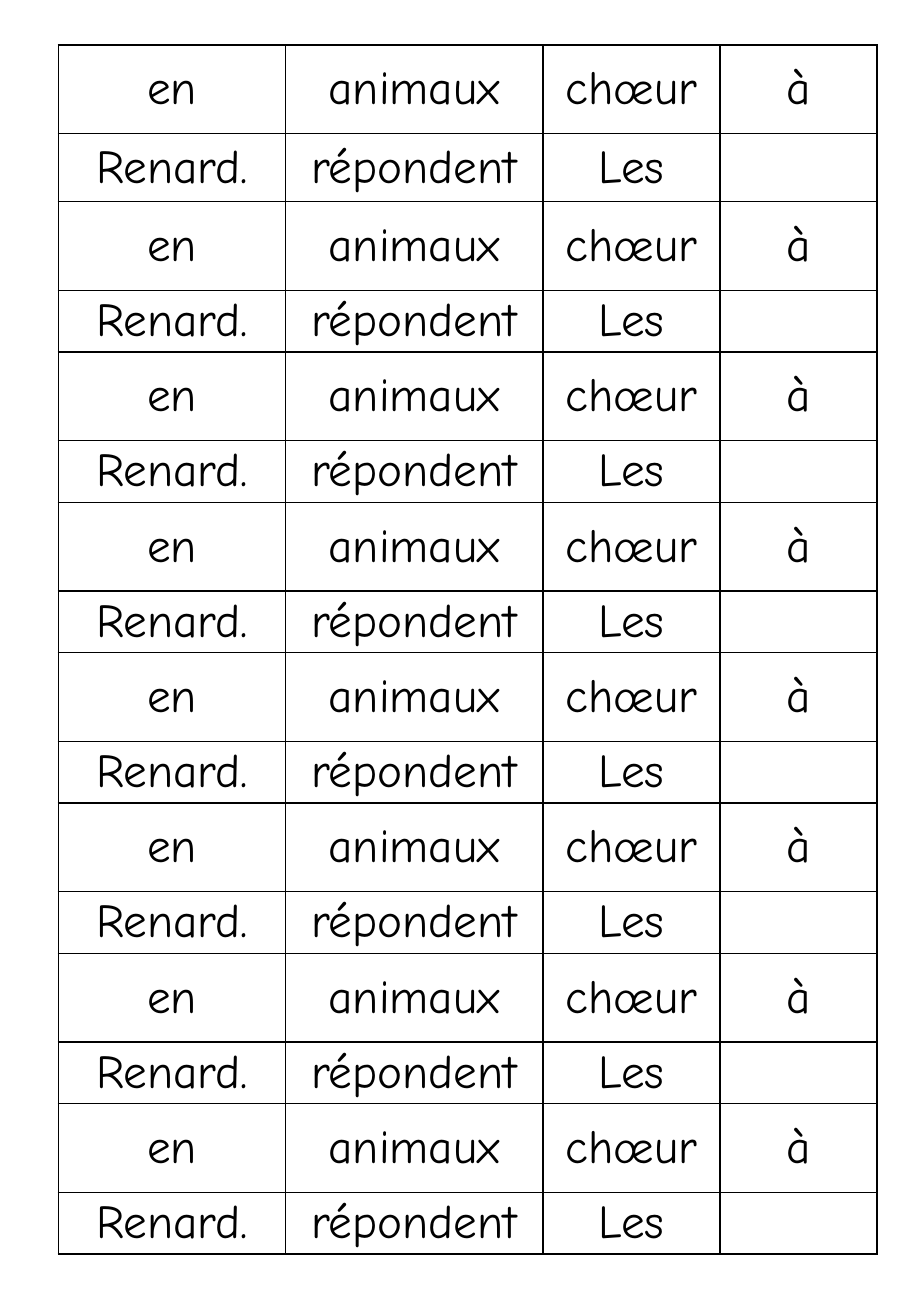
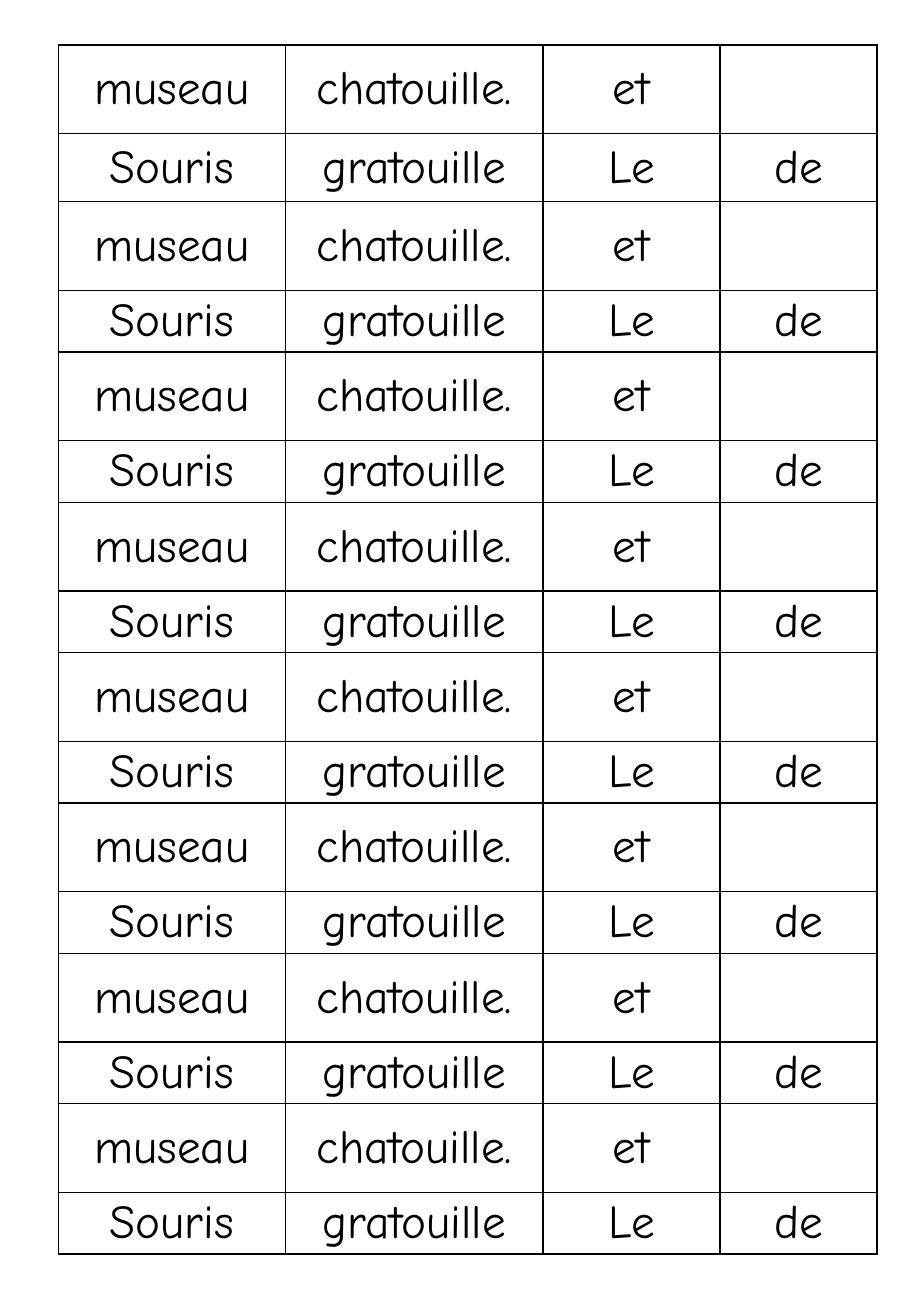
import pptx
import pptx.dml.color
import pptx.enum.text
import pptx.oxml.ns
import pptx.util
import lxml.etree

Inches = pptx.util.Inches
Pt = pptx.util.Pt

SENTENCE_CARDS = [
    [("en", "animaux", "chœur", "à"), ("Renard.", "répondent", "Les", "")],
    [("museau", "chatouille.", "et", ""), ("Souris", "gratouille", "Le", "de")],
]
CARDS_PER_PAGE = 8
COLUMN_WIDTHS = (1.87, 2.12, 1.46, 1.29)
ROW_HEIGHTS = [0.73, 0.56] + [0.73, 0.48] * (CARDS_PER_PAGE - 1)
LEFT, TOP = 0.48, 0.37
FONT = "Comic Neue"
FONT_SIZE = 28
BORDER_WIDTH = 1
BLACK = pptx.dml.color.RGBColor(0x00, 0x00, 0x00)


def add_borders(cell):
    qn = pptx.oxml.ns.qn
    properties = cell._tc.get_or_add_tcPr()
    for side in ("a:lnL", "a:lnR", "a:lnT", "a:lnB"):
        line = lxml.etree.SubElement(properties, qn(side), w=str(Pt(BORDER_WIDTH)))
        fill = lxml.etree.SubElement(line, qn("a:solidFill"))
        lxml.etree.SubElement(fill, qn("a:srgbClr"), val=str(BLACK))


def fill_cell(cell, word):
    add_borders(cell)
    cell.fill.background()
    cell.margin_left = cell.margin_right = Inches(0.05)
    cell.margin_top = cell.margin_bottom = Inches(0.03)
    cell.vertical_anchor = pptx.enum.text.MSO_ANCHOR.MIDDLE
    if not word:
        return
    para = cell.text_frame.paragraphs[0]
    para.alignment = pptx.enum.text.PP_ALIGN.CENTER
    span = para.add_run()
    span.text = word
    span.font.name = FONT
    span.font.size = Pt(FONT_SIZE)
    span.font.color.rgb = BLACK


def add_card_page(deck, card):
    page = deck.slides.add_slide(deck.slide_layouts[6])
    rows = card * CARDS_PER_PAGE
    table = page.shapes.add_table(
        len(rows), len(COLUMN_WIDTHS), Inches(LEFT), Inches(TOP),
        Inches(sum(COLUMN_WIDTHS)), Inches(sum(ROW_HEIGHTS)),
    ).table
    table.first_row = False
    table.horz_banding = False
    for column, width in zip(table.columns, COLUMN_WIDTHS):
        column.width = Inches(width)
    for row, height, words in zip(table.rows, ROW_HEIGHTS, rows):
        row.height = Inches(height)
        for cell, word in zip(row.cells, words):
            fill_cell(cell, word)


def main():
    deck = pptx.Presentation()
    deck.slide_width = Inches(7.5)
    deck.slide_height = Inches(10.83)
    for card in SENTENCE_CARDS:
        add_card_page(deck, card)
    deck.save("out.pptx")


if __name__ == "__main__":
    main()
